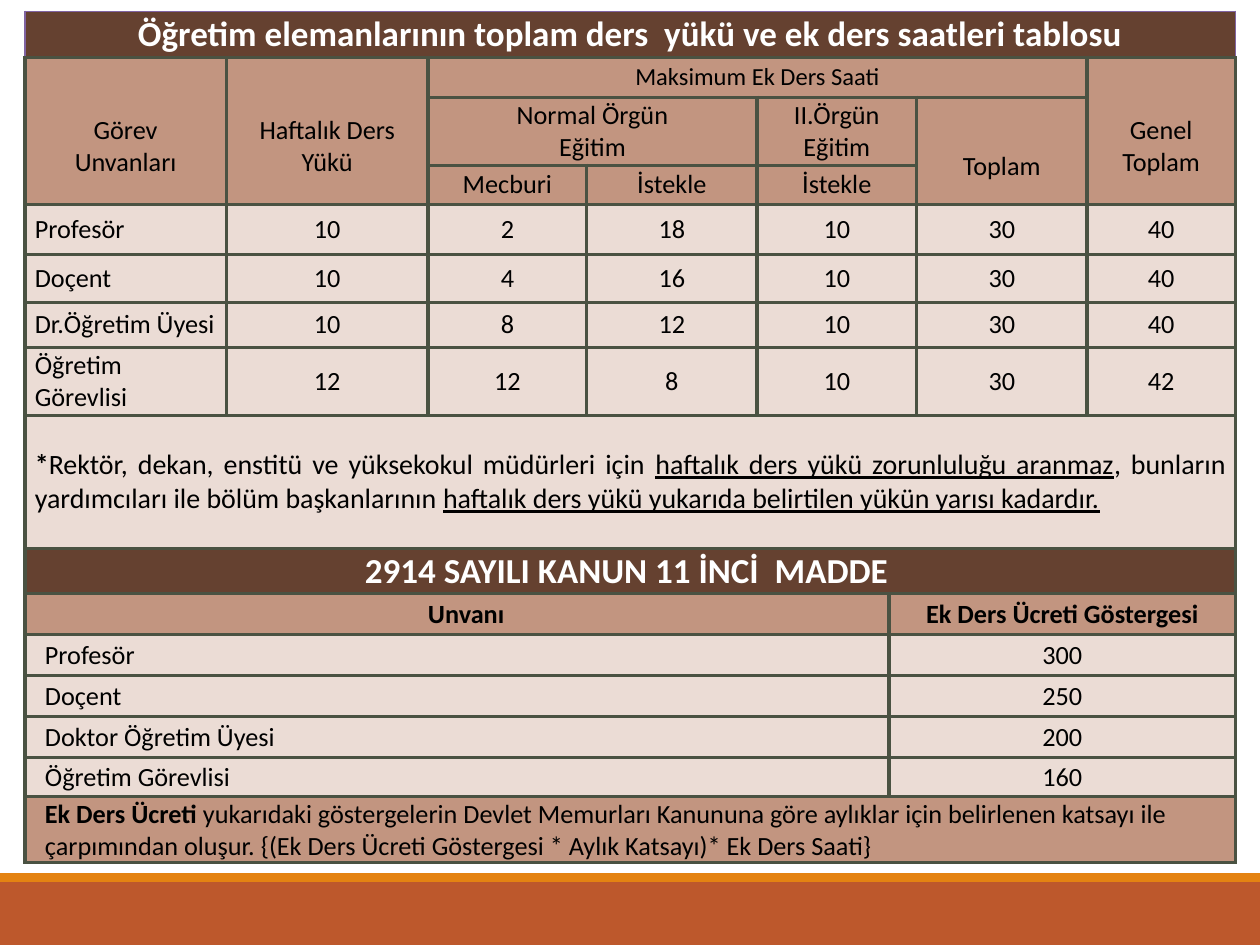
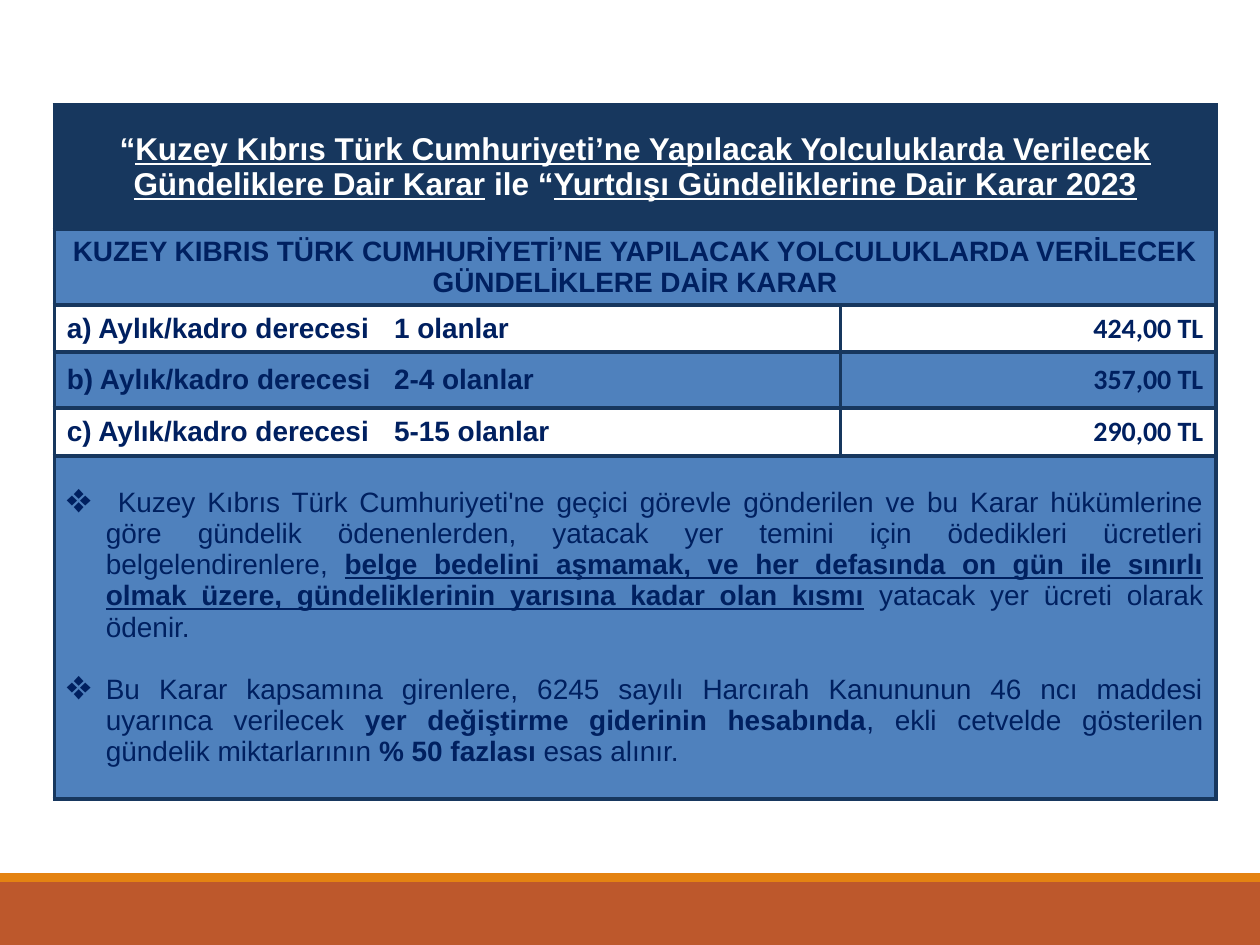
import lxml.etree
import pptx
import pptx.dml.color
import pptx.enum.shapes
import pptx.enum.text
import pptx.oxml.ns
import pptx.util

Pt = pptx.util.Pt
RGB = pptx.dml.color.RGBColor.from_string
qn = pptx.oxml.ns.qn
SubElement = lxml.etree.SubElement
LEFT, CENTER, RIGHT, JUSTIFY = (
    pptx.enum.text.PP_ALIGN.LEFT,
    pptx.enum.text.PP_ALIGN.CENTER,
    pptx.enum.text.PP_ALIGN.RIGHT,
    pptx.enum.text.PP_ALIGN.JUSTIFY,
)


class Theme:
    white, black = "FFFFFF", "000000"
    rust, orange = "BD582C", "E48312"
    brown, tan, blush = "654130", "C29580", "EBDCD5"
    olive, purple = "4A5242", "8064A2"
    navy, ink, sky = "17375E", "002060", "4F81BD"
    sans, body = "Arial", "Calibri"
    title, subtitle, note, text, small = 20, 18, 16, 15, 14
    line, thin = 2.25, 1
    tint = 20


def write(cell, text, size=Theme.text, color=Theme.black, font=Theme.body, bold=False,
          align=CENTER, fill=None, opacity=100, insets=(1, 1, 1, 1),
          bullet=None, indent=0, gap=0, tab=None):
    if fill:
        cell.fill.solid()
        cell.fill.fore_color.rgb = RGB(fill)
        if opacity < 100:
            shade = cell._tc.tcPr.find(".//" + qn("a:srgbClr"))
            SubElement(shade, qn("a:alpha"), val=str(opacity * 1000))
    else:
        cell.fill.background()
    cell.vertical_anchor = pptx.enum.text.MSO_ANCHOR.MIDDLE
    cell.margin_left, cell.margin_top, cell.margin_right, cell.margin_bottom = map(Pt, insets)
    lines = [[(line, "")] for line in text.split("\n")] if isinstance(text, str) else text
    for number, runs in enumerate(lines):
        paragraph = cell.text_frame.paragraphs[0] if number == 0 else cell.text_frame.add_paragraph()
        paragraph.alignment = align
        if number and gap:
            paragraph.space_before = Pt(gap)
        properties = paragraph._p.get_or_add_pPr()
        if bullet:
            properties.set("marL", str(Pt(indent)))
            properties.set("indent", str(-Pt(indent)))
            SubElement(properties, qn("a:buSzPct"), val="150000")
            SubElement(properties, qn("a:buChar"), char=bullet)
        if tab:
            stops = SubElement(properties, qn("a:tabLst"))
            SubElement(stops, qn("a:tab"), pos=str(Pt(tab)), algn="l")
        for words, marks in runs:
            run = paragraph.add_run()
            run.text = words
            run.font.name = font
            run.font.size = Pt(size)
            run.font.color.rgb = RGB(color)
            run.font.bold = bold or "b" in marks
            run.font.underline = "u" in marks


def add_grid(slide, left, top, widths, heights, color, title_color):
    grid = slide.shapes.add_table(len(heights), len(widths), Pt(left), Pt(top),
                                  Pt(sum(widths)), Pt(sum(heights))).table
    grid.first_row = grid.horz_banding = False
    for column, width in zip(grid.columns, widths):
        column.width = Pt(width)
    for number, (row, height) in enumerate(zip(grid.rows, heights)):
        row.height = Pt(height)
        for cell in row.cells:
            properties = cell._tc.get_or_add_tcPr()
            for side in ("lnL", "lnR", "lnT", "lnB"):
                outer = number == 0 and side != "lnB" and title_color != color
                edge = SubElement(properties, qn("a:" + side),
                                  w=str(Pt(Theme.thin if outer else Theme.line)))
                paint = SubElement(edge, qn("a:solidFill"))
                SubElement(paint, qn("a:srgbClr"), val=title_color if outer else color)
    return grid


deck = pptx.Presentation()
deck.slide_width, deck.slide_height = Pt(720), Pt(540)
blank = deck.slide_layouts[6]
hours_slide = deck.slides.add_slide(blank)
allowance_slide = deck.slides.add_slide(blank)

for top, height, color in ((499, 5, Theme.orange), (504, 36, Theme.rust)):
    band = hours_slide.shapes.add_shape(pptx.enum.shapes.MSO_SHAPE.RECTANGLE,
                                        0, Pt(top), Pt(720), Pt(height))
    band.shadow.inherit = False
    band.fill.solid()
    band.fill.fore_color.rgb = RGB(color)
    band.line.fill.background()
    deck.slide_master.shapes.element.insert(2, band.element)

hours = add_grid(
    hours_slide, 14.2, 6.5,
    [115.2, 115.2, 90.7, 97.2, 75.6, 15.8, 97.2, 85],
    [26.4, 22.6, 38.9, 22.3, 28.6, 27.4, 25.8, 38.9, 76, 25.8] + [23.4] * 4 + [22.4, 37.7],
    Theme.olive, Theme.purple)

lowered = (8, 19, 8, 1)
headings = [
    (1, 0, 3, 0, "Görev\nUnvanları", dict(insets=lowered)),
    (1, 1, 3, 1, "Haftalık Ders\nYükü", dict(insets=lowered)),
    (1, 2, 1, 6, "Maksimum Ek Ders Saati", dict(size=Theme.small)),
    (1, 7, 3, 7, "Genel Toplam", dict(insets=lowered)),
    (2, 2, 2, 3, "Normal Örgün\nEğitim", {}),
    (2, 4, 2, 5, "II.Örgün\nEğitim", {}),
    (2, 6, 3, 6, "Toplam", dict(insets=lowered)),
    (3, 2, 3, 2, "Mecburi", {}),
    (3, 3, 3, 3, "İstekle", {}),
    (3, 4, 3, 5, "İstekle", {}),
]
for top, left, bottom, right, heading, style in headings:
    if (top, left) != (bottom, right):
        hours.cell(top, left).merge(hours.cell(bottom, right))
    write(hours.cell(top, left), heading, fill=Theme.tan, **style)

weekly_hours = [
    ("Profesör", 10, 2, 18, 10, 30, 40),
    ("Doçent", 10, 4, 16, 10, 30, 40),
    ("Dr.Öğretim Üyesi", 10, 8, 12, 10, 30, 40),
    ("Öğretim Görevlisi", 12, 12, 8, 10, 30, 42),
]
for row, (rank, *counts) in enumerate(weekly_hours, 4):
    hours.cell(row, 4).merge(hours.cell(row, 5))
    write(hours.cell(row, 0), rank, align=LEFT, fill=Theme.blush, opacity=Theme.tint,
          insets=(5.75, 1, 5, 1))
    for column, count in zip((1, 2, 3, 4, 6, 7), counts):
        write(hours.cell(row, column), str(count), fill=Theme.blush, opacity=Theme.tint)

exemption = [[
    ("*", "b"),
    ("Rektör, dekan, enstitü ve yüksekokul müdürleri için ", ""),
    ("haftalık ders yükü zorunluluğu aranmaz", "u"),
    (", bunların yardımcıları ile bölüm başkanlarının ", ""),
    ("haftalık ders yükü yukarıda belirtilen yükün yarısı kadardır.", "u"),
]]
formula = [[
    ("Ek Ders Ücreti", "b"),
    (" yukarıdaki göstergelerin Devlet Memurları Kanununa göre aylıklar için belirlenen katsayı ile "
     "çarpımından oluşur. {(Ek Ders Ücreti Göstergesi * Aylık Katsayı)* Ek Ders Saati}", ""),
]]
title_style = dict(size=Theme.title, color=Theme.white, bold=True, fill=Theme.brown)
indented = (11.5, 1, 1, 0)
full_rows = [
    (0, "Öğretim elemanlarının toplam ders  yükü ve ek ders saatleri tablosu", title_style),
    (8, exemption, dict(size=Theme.note, align=JUSTIFY, fill=Theme.blush, opacity=Theme.tint,
                        insets=(5.75, 1, 5.75, 1))),
    (9, "2914 SAYILI KANUN 11 İNCİ  MADDE", dict(title_style, insets=(1, 1, 5, 0))),
    (15, formula, dict(align=LEFT, fill=Theme.tan, insets=indented)),
]
for row, text, style in full_rows:
    hours.cell(row, 0).merge(hours.cell(row, 7))
    write(hours.cell(row, 0), text, **style)

fee_indicators = [
    ("Unvanı", "Ek Ders Ücreti Göstergesi"),
    ("Profesör", "300"),
    ("Doçent", "250"),
    ("Doktor Öğretim Üyesi", "200"),
    ("Öğretim Görevlisi", "160"),
]
for row, (rank, indicator) in enumerate(fee_indicators, 10):
    heading = row == 10
    style = dict(bold=heading, fill=Theme.tan if heading else Theme.blush)
    hours.cell(row, 0).merge(hours.cell(row, 4))
    hours.cell(row, 5).merge(hours.cell(row, 7))
    write(hours.cell(row, 0), rank, align=CENTER if heading else LEFT, insets=indented, **style)
    write(hours.cell(row, 5), indicator, insets=(1, 1, 1, 0), **style)

allowance = add_grid(allowance_slide, 31, 60, [449.3, 214.5], [71, 43.4, 26.9, 32, 27.4, 196],
                     Theme.navy, Theme.navy)
padded = dict(insets=(7.2, 3.6, 7.2, 3.6))
tinted = dict(padded, fill=Theme.sky, opacity=Theme.tint)
decree = dict(size=Theme.note, color=Theme.ink)

decree_title = [[
    ("“", ""),
    ("Kuzey Kıbrıs Türk Cumhuriyeti’ne Yapılacak Yolculuklarda Verilecek "
     "Gündeliklere Dair Karar", "u"),
    (" ile “", ""),
    ("Yurtdışı Gündeliklerine Dair Karar 2023", "u"),
]]
provisions = [
    [(" Kuzey Kıbrıs Türk Cumhuriyeti'ne geçici görevle gönderilen ve bu Karar hükümlerine göre "
      "gündelik ödenenlerden, yatacak yer temini için ödedikleri ücretleri belgelendirenlere, ", ""),
     ("belge bedelini aşmamak, ve her defasında on gün ile sınırlı olmak üzere, "
      "gündeliklerinin yarısına kadar olan kısmı", "bu"),
     (" yatacak yer ücreti olarak ödenir.", "")],
    [("Bu Karar kapsamına girenlere, 6245 sayılı Harcırah Kanununun 46 ncı maddesi uyarınca "
      "verilecek ", ""),
     ("yer değiştirme giderinin hesabında", "b"),
     (", ekli cetvelde gösterilen gündelik miktarlarının ", ""),
     ("% 50 fazlası ", "b"),
     ("esas alınır.", "")],
]
decree_rows = [
    (0, decree_title, dict(padded, size=Theme.subtitle, color=Theme.white, bold=True,
                           fill=Theme.navy)),
    (1, "KUZEY KIBRIS TÜRK CUMHURİYETİ’NE YAPILACAK YOLCULUKLARDA VERİLECEK "
        "GÜNDELİKLERE DAİR KARAR", dict(tinted, **decree, bold=True)),
    (5, provisions, dict(tinted, **decree, align=JUSTIFY, bullet="❖", indent=22.3, gap=18)),
]
for row, text, style in decree_rows:
    allowance.cell(row, 0).merge(allowance.cell(row, 1))
    write(allowance.cell(row, 0), text, font=Theme.sans, **style)

daily_rates = [
    ("a) Aylık/kadro derecesi\t1 olanlar", "424,00 TL"),
    ("b) Aylık/kadro derecesi\t2-4 olanlar", "357,00 TL"),
    ("c) Aylık/kadro derecesi\t5-15 olanlar", "290,00 TL"),
]
for row, (grade, rate) in enumerate(daily_rates, 2):
    style = dict(tinted if row == 3 else padded, **decree, bold=True)
    write(allowance.cell(row, 0), grade, font=Theme.sans, align=LEFT, tab=187, **style)
    write(allowance.cell(row, 1), rate, align=RIGHT, **style)

deck.save("out.pptx")
